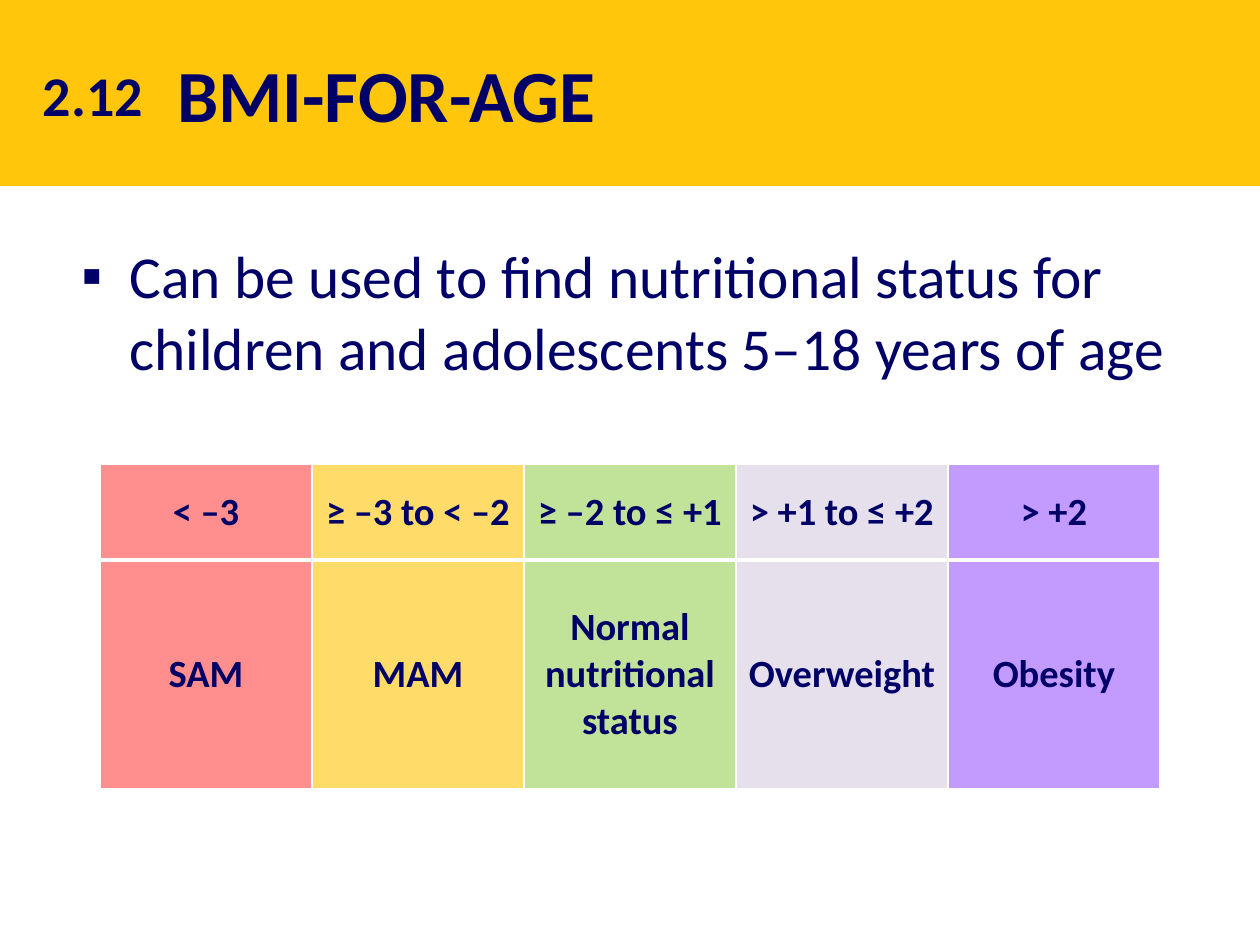
from pptx import Presentation
from pptx.dml.color import RGBColor
from pptx.enum.shapes import MSO_SHAPE
from pptx.enum.text import MSO_ANCHOR, PP_ALIGN
from pptx.oxml.ns import qn
from pptx.util import Emu, Pt
from lxml.etree import SubElement

# Content
NUMBER = "2.12"
TITLE = "BMI-FOR-AGE"
POINT = "Can be used to find nutritional status for children and adolescents 5–18 years of age"
# z-score range, nutritional status, colour
CATEGORIES = [
    ("< –3", "SAM", "severe"),
    ("≥ –3 to < –2", "MAM", "moderate"),
    ("≥ –2 to ≤ +1", "Normal nutritional status", "normal"),
    ("> +1 to ≤ +2", "Overweight", "overweight"),
    ("> +2", "Obesity", "obese"),
]
COLORS = {
    "banner": "FFC60B", "ink": "000066", "rule": "FFFFFF",
    "severe": "FF8F8F", "moderate": "FFDB69", "normal": "C0E399",
    "overweight": "E6E0EC", "obese": "C39BFF",
}
FONT = "Calibri"

# Layout in px, 126 to the inch
SCALE = 914400 // 126
WIDTH, HEIGHT = 1260, 945
TABLE_LEFT, TABLE_TOP, COLUMN_WIDTH = 100, 464, 212
ROW_HEIGHTS = (96, 229)


def px(length):
    return Emu(length * SCALE)


def rgb(name):
    return RGBColor.from_string(COLORS[name])


def write(frame, text, size, bold=True, align=PP_ALIGN.LEFT):
    frame.text = text
    paragraph = frame.paragraphs[0]
    paragraph.alignment = align
    font = paragraph.runs[0].font
    font.name, font.size, font.bold = FONT, Pt(size), bold
    font.color.rgb = rgb("ink")
    return paragraph


def add_text(box, text, size, wrap=True, **style):
    frame = slide.shapes.add_textbox(*map(px, box)).text_frame
    frame.word_wrap = wrap
    return write(frame, text, size, **style)


def add_bullet(paragraph, mark, margin, indent):
    properties = paragraph._p.get_or_add_pPr()
    properties.set("marL", str(px(margin)))
    properties.set("indent", str(px(indent)))
    color = SubElement(properties, qn("a:buClr"))
    SubElement(color, qn("a:srgbClr"), val=COLORS["ink"])
    SubElement(properties, qn("a:buFont"), typeface="Arial")
    SubElement(properties, qn("a:buChar"), char=mark)


def add_borders(cell, widths):
    properties = cell._tc.get_or_add_tcPr()
    for position, (side, width) in enumerate(widths.items()):
        line = SubElement(properties, qn(f"a:ln{side}"), w=str(Pt(width)))
        fill = SubElement(line, qn("a:solidFill"))
        SubElement(fill, qn("a:srgbClr"), val=COLORS["rule"])
        properties.insert(position, line)  # borders precede the cell fill


deck = Presentation()
deck.slide_width, deck.slide_height = px(WIDTH), px(HEIGHT)
slide = deck.slides.add_slide(deck.slide_layouts[6])

# Banner with section number and title
banner = slide.shapes.add_shape(MSO_SHAPE.RECTANGLE, 0, 0, px(WIDTH), px(186))
banner.shadow.inherit = False
banner.fill.solid()
banner.fill.fore_color.rgb = rgb("banner")
banner.line.fill.background()
add_text((165, 43, 1031, 76), TITLE, 42)
add_text((30, 54, 126, 81), NUMBER, 32, wrap=False, align=PP_ALIGN.CENTER)

# Bullet point
point = add_text((30, 233, 1166, 158), POINT, 34, bold=False)
point.space_after = Pt(6)
add_bullet(point, "▪", 87, -48)

# Classification table
table = slide.shapes.add_table(
    len(ROW_HEIGHTS), len(CATEGORIES), px(TABLE_LEFT), px(TABLE_TOP),
    px(COLUMN_WIDTH * len(CATEGORIES)), px(sum(ROW_HEIGHTS))).table
for row, height in zip(table.rows, ROW_HEIGHTS):
    row.height = px(height)
for c, (score, status, color) in enumerate(CATEGORIES):
    table.columns[c].width = px(COLUMN_WIDTH)
    for r, text in enumerate((score, status)):
        cell = table.cell(r, c)
        cell.margin_left = cell.margin_right = cell.margin_top = cell.margin_bottom = 0
        cell.vertical_anchor = MSO_ANCHOR.MIDDLE
        cell.fill.solid()
        cell.fill.fore_color.rgb = rgb(color)
        top, bottom = ((1, 3), (3, 1))[r]
        add_borders(cell, {"L": 1, "R": 1, "T": top, "B": bottom})
        write(cell.text_frame, text, 22, align=PP_ALIGN.CENTER)

deck.save("out.pptx")
